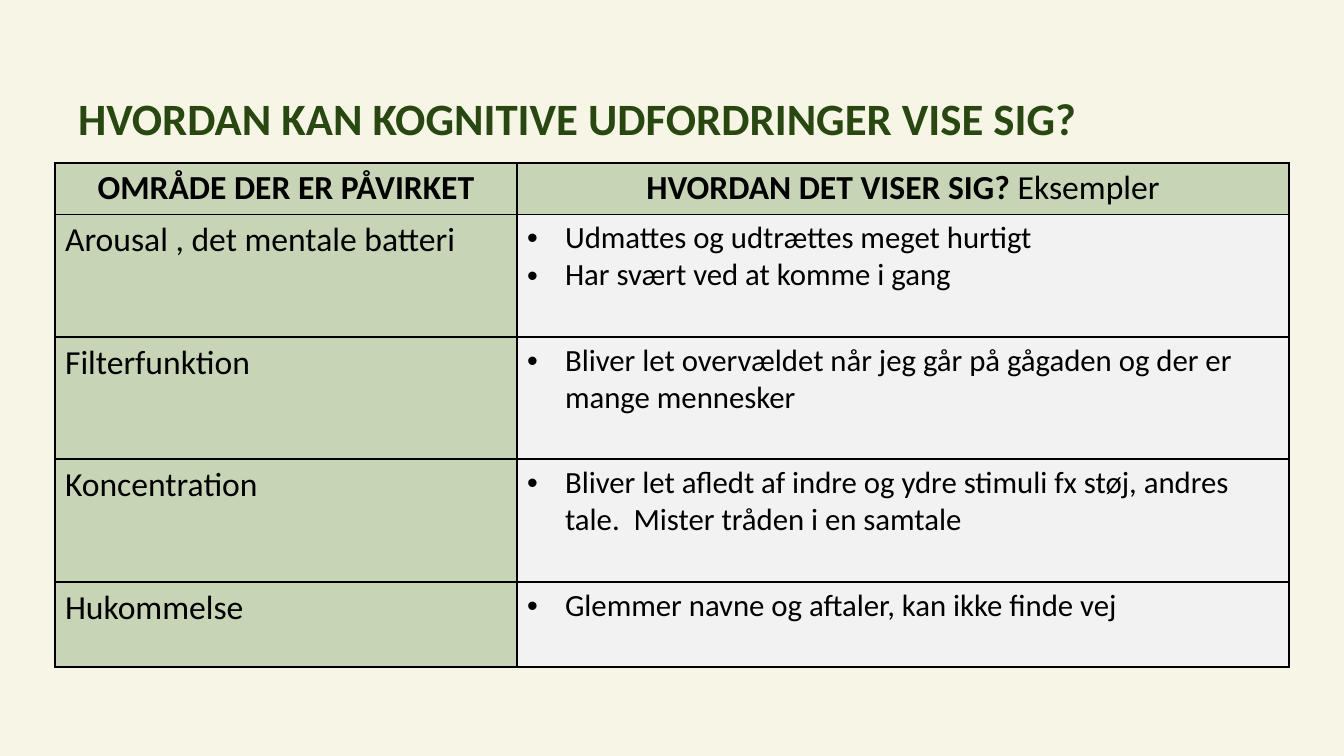
import pptx
import pptx.util
import pptx.oxml
import pptx.oxml.ns
import pptx.dml.color
import pptx.enum.text
from dataclasses import dataclass

ALIGN = pptx.enum.text.PP_ALIGN
ANCHOR = pptx.enum.text.MSO_ANCHOR


@dataclass(frozen=True)
class Theme:
    font: str = "Calibri"
    background: str = "F7F6E6"
    heading: str = "294711"
    ink: str = "000000"
    area_fill: str = "C7D5B6"
    example_fill: str = "F2F2F2"
    title_size: int = 32
    area_size: int = 24
    example_size: int = 22
    border_width: int = 1


THEME = Theme()
TITLE = "HVORDAN KAN KOGNITIVE UDFORDRINGER VISE SIG?"
# Each heading is a list of (text, bold) parts
HEADINGS = [
    [("OMRÅDE DER ER PÅVIRKET", True)],
    [("HVORDAN DET VISER SIG? ", True), ("Eksempler", False)],
]
# Area, examples, row height in px
AREAS = [
    ("Arousal , det mentale batteri",
     ["Udmattes og udtrættes meget hurtigt", "Har svært ved at komme i gang"], 123),
    ("Filterfunktion",
     ["Bliver let overvældet når jeg går på gågaden og der er mange mennesker"], 122),
    ("Koncentration",
     ["Bliver let afledt af indre og ydre stimuli fx støj, andres tale.  Mister tråden i en samtale"], 123),
    ("Hukommelse", ["Glemmer navne og aftaler, kan ikke finde vej"], 85),
]
HEADING_HEIGHT = 50
COLUMN_WIDTHS = [462, 772]
BULLET_INDENT = 38


def px(length):
    return pptx.util.Emu(round(length * 914400 / 100.8))


def rgb(colour):
    return pptx.dml.color.RGBColor.from_string(colour)


def style(paragraph, size, colour=THEME.ink, bold=None):
    font = paragraph.font
    font.name = THEME.font
    font.size = pptx.util.Pt(size)
    font.color.rgb = rgb(colour)
    font.bold = bold


def add_bullet(paragraph):
    properties = paragraph._p.get_or_add_pPr()
    properties.set("marL", str(px(BULLET_INDENT)))
    properties.set("indent", str(-px(BULLET_INDENT)))
    namespace = pptx.oxml.ns.nsdecls("a")
    for element in ('buFont {} typeface="Arial"', 'buChar {} char="•"'):
        properties.append(pptx.oxml.parse_xml(f"<a:{element.format(namespace)}/>"))


def frame_cell(cell, fill):
    """Draw the four borders, then the fill."""
    properties = cell._tc.get_or_add_tcPr()
    width = pptx.util.Pt(THEME.border_width)
    for side in ("lnL", "lnR", "lnT", "lnB"):
        properties.append(pptx.oxml.parse_xml(
            f'<a:{side} {pptx.oxml.ns.nsdecls("a")} w="{width}">'
            f'<a:solidFill><a:srgbClr val="{THEME.ink}"/></a:solidFill></a:{side}>'))
    cell.fill.solid()
    cell.fill.fore_color.rgb = rgb(fill)


def fill_heading(cell, parts):
    frame_cell(cell, THEME.area_fill)
    cell.vertical_anchor = ANCHOR.MIDDLE
    heading = cell.text_frame.paragraphs[0]
    heading.alignment = ALIGN.CENTER
    style(heading, THEME.area_size)
    for text, bold in parts:
        part = heading.add_run()
        part.text = text
        part.font.bold = bold


def fill_area(cell, area):
    frame_cell(cell, THEME.area_fill)
    cell.text = area
    style(cell.text_frame.paragraphs[0], THEME.area_size)


def fill_examples(cell, examples):
    frame_cell(cell, THEME.example_fill)
    cell.text = "\n".join(examples)
    for example in cell.text_frame.paragraphs:
        add_bullet(example)
        style(example, THEME.example_size)


def set_title(slide, left, top, width, height):
    title = slide.shapes.title
    title.left, title.top, title.width, title.height = map(px, (left, top, width, height))
    frame = title.text_frame
    frame.text = TITLE
    frame.word_wrap = True
    frame.auto_size = pptx.enum.text.MSO_AUTO_SIZE.NONE
    frame.vertical_anchor = ANCHOR.MIDDLE
    heading = frame.paragraphs[0]
    heading.alignment = ALIGN.LEFT
    heading.line_spacing = 0.9
    style(heading, THEME.title_size, THEME.heading, True)


def add_overview(slide, left, top):
    heights = [HEADING_HEIGHT] + [height for _, _, height in AREAS]
    overview = slide.shapes.add_table(
        len(heights), len(COLUMN_WIDTHS), px(left), px(top),
        px(sum(COLUMN_WIDTHS)), px(sum(heights))).table
    overview.first_row = overview.horz_banding = False
    for column, width in zip(overview.columns, COLUMN_WIDTHS):
        column.width = px(width)
    for row, height in zip(overview.rows, heights):
        row.height = px(height)
    for index, parts in enumerate(HEADINGS):
        fill_heading(overview.cell(0, index), parts)
    for index, (area, examples, _) in enumerate(AREAS, start=1):
        fill_area(overview.cell(index, 0), area)
        fill_examples(overview.cell(index, 1), examples)


def main():
    deck = pptx.Presentation()
    deck.slide_width, deck.slide_height = px(1344), px(756)
    slide = deck.slides.add_slide(deck.slide_layouts[5])

    # Background
    background = slide.background.fill
    background.solid()
    background.fore_color.rgb = rgb(THEME.background)

    # Title and table
    set_title(slide, 68, 78, 1159, 85)
    add_overview(slide, 55, 163)
    deck.save("out.pptx")


if __name__ == "__main__":
    main()
